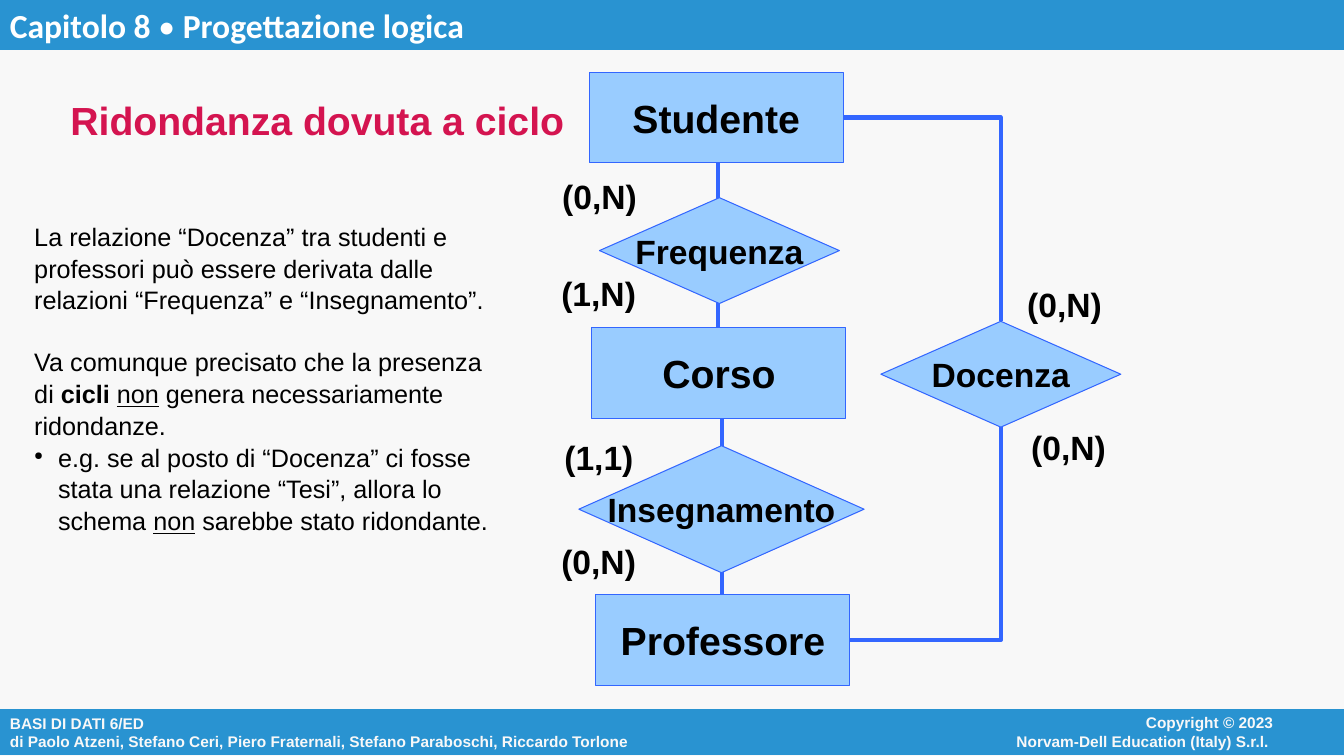
from lxml import etree
from pptx import Presentation
from pptx.dml.color import RGBColor
from pptx.enum.shapes import MSO_CONNECTOR, MSO_SHAPE
from pptx.enum.text import MSO_ANCHOR, PP_ALIGN
from pptx.oxml.ns import qn
from pptx.util import Pt

RECTANGLE, DIAMOND = MSO_SHAPE.RECTANGLE, MSO_SHAPE.DIAMOND
STRAIGHT, ELBOW = MSO_CONNECTOR.STRAIGHT, MSO_CONNECTOR.ELBOW
TOP, MIDDLE = MSO_ANCHOR.TOP, MSO_ANCHOR.MIDDLE
LEFT, CENTER, RIGHT = PP_ALIGN.LEFT, PP_ALIGN.CENTER, PP_ALIGN.RIGHT
TOP_SITE, BOTTOM_SITE, RIGHT_SITE = 0, 2, 3

COLORS = {
    "background": "F8F8F8",
    "band": "2993D1",
    "white": "FFFFFF",
    "title": "D41450",
    "node": "99CCFF",
    "edge": "3366FF",
    "text": "000000",
}
ENTITY_SIZE = (181.44, 64.8)
RELATION_SIZE = (171.36, 75.6)


def rgb(name):
    return RGBColor.from_string(COLORS[name])


def set_font(paragraph, size, color, bold=None, name="Arial"):
    font = paragraph.font
    font.name, font.size, font.bold = name, Pt(size), bold
    font.color.rgb = rgb(color)


def write_lines(shape, lines, size, color, align=LEFT, anchor=MIDDLE, wrap=True, name="Arial"):
    """Fill a shape with bold paragraphs; each line is a list of (text, bold) runs."""
    frame = shape.text_frame
    frame.word_wrap = wrap
    frame.vertical_anchor = anchor
    for index, runs in enumerate(lines):
        paragraph = frame.add_paragraph() if index else frame.paragraphs[0]
        paragraph.alignment = align
        set_font(paragraph, size, color, True, name)
        for text, bold in runs:
            run = paragraph.add_run()
            run.text = text
            if not bold:
                run.font.bold = False


def plain(*texts):
    return [[(text, True)] for text in texts]


def add_box(slide, kind, left, top, width, height, fill, line, line_width=0.75):
    shape = slide.shapes.add_shape(kind, Pt(left), Pt(top), Pt(width), Pt(height))
    shape.shadow.inherit = False
    shape.fill.solid()
    shape.fill.fore_color.rgb = rgb(fill)
    shape.line.color.rgb = rgb(line)
    shape.line.width = Pt(line_width)
    return shape


def add_text(slide, left, top, width, height):
    return slide.shapes.add_textbox(Pt(left), Pt(top), Pt(width), Pt(height))


def add_node(slide, kind, text, left, top, size, font_size):
    shape = add_box(slide, kind, left, top, *size, "node", "edge")
    write_lines(shape, plain(text), font_size, "text", CENTER, wrap=False)
    return shape


def add_entity(slide, text, left, top):
    return add_node(slide, RECTANGLE, text, left, top, ENTITY_SIZE, 28)


def add_relation(slide, text, left, top, size=RELATION_SIZE):
    return add_node(slide, DIAMOND, text, left, top, size, 24)


def add_cardinality(slide, text, center, top):
    width = 68
    box = add_text(slide, center - width / 2, top, width, 36)
    write_lines(box, plain(text), 24, "text", CENTER, wrap=False)


def style_connector(connector):
    connector.line.color.rgb = rgb("edge")
    connector.line.width = Pt(3)
    etree.SubElement(connector._element.spPr, qn("a:effectLst"))


def add_vertical(slide, x, top, bottom):
    style_connector(slide.shapes.add_connector(STRAIGHT, Pt(x), Pt(top), Pt(x), Pt(bottom)))


def add_elbow(slide, entity, relation, relation_site):
    connector = slide.shapes.add_connector(ELBOW, 0, 0, 0, 0)
    connector.begin_connect(entity, RIGHT_SITE)
    connector.end_connect(relation, relation_site)
    connector._element.spPr.find(qn("a:prstGeom")).set("prst", "bentConnector2")
    style_connector(connector)


def add_bullet(paragraph, indent):
    properties = paragraph._p.get_or_add_pPr()
    properties.set("marL", str(Pt(indent)))
    properties.set("indent", str(-Pt(indent)))
    color = etree.SubElement(properties, qn("a:buClr"))
    etree.SubElement(color, qn("a:srgbClr"), val=COLORS["text"])
    etree.SubElement(properties, qn("a:buSzPct"), val="45000")
    etree.SubElement(properties, qn("a:buChar"), char="●")


def add_explanation(slide):
    paragraphs = [
        [("La relazione “Docenza” tra studenti e professori può essere derivata dalle "
          "relazioni “Frequenza” e “Insegnamento”.", "")],
        [("Va comunque precisato che la presenza di ", ""), ("cicli ", "bold"),
         ("non", "underline"), (" genera necessariamente ridondanze.", "")],
        [("e.g. se al posto di “Docenza” ci fosse stata una relazione “Tesi”, "
          "allora lo schema ", ""), ("non", "underline"),
         (" sarebbe stato ridondante.", "")],
    ]
    frame = add_text(slide, 24.48, 156.96, 338.4, 305.28).text_frame
    frame.word_wrap = True
    frame.margin_left = frame.margin_right = frame.margin_top = frame.margin_bottom = 0
    for index, runs in enumerate(paragraphs):
        paragraph = frame.add_paragraph() if index else frame.paragraphs[0]
        paragraph.line_spacing = 1.05
        if index == 1:
            paragraph.space_before = Pt(21.6)
        if index == 2:
            add_bullet(paragraph, 17)
        set_font(paragraph, 18, "text")
        for text, style in runs:
            run = paragraph.add_run()
            run.text = text
            if style == "bold":
                run.font.bold = True
            elif style == "underline":
                run.font.underline = True


def add_bands(slide):
    footer = add_box(slide, RECTANGLE, 0, 506.16, 961, 33.84, "band", "background")
    write_lines(footer, plain(
        "BASI DI DATI 6/ED",
        "di Paolo Atzeni, Stefano Ceri, Piero Fraternali, Stefano Paraboschi, Riccardo Torlone",
    ), 11, "background")
    rights = add_text(slide, 640.08, 506.16, 276.48, 33.12)
    write_lines(rights, plain("Copyright © 2023", "Norvam-Dell Education (Italy) S.r.l. "),
                11, "background", RIGHT, TOP)
    header = add_box(slide, RECTANGLE, 0, 0, 961, 36, "band", "background", 0)
    chapter = [("Capitolo 8 ", True), ("•", False), (" Progettazione logica", True)]
    write_lines(header, [chapter], 24, "white", anchor=TOP, name="Calibri")


def add_diagram(slide):
    # Vertical links lie behind the nodes
    add_vertical(slide, 513, 108, 252)
    add_vertical(slide, 515.5, 298.8, 442.8)

    # Entities and relations
    student = add_entity(slide, "Studente", 420.84, 51.6)
    add_entity(slide, "Corso", 422.8, 234)
    professor = add_entity(slide, "Professore", 425.7, 424.8)
    add_relation(slide, "Frequenza", 428.2, 141.2)
    add_relation(slide, "Insegnamento", 413.5, 318.4, (203.76, 90.72))
    teaching = add_relation(slide, "Docenza", 629.2, 229.5)

    # The link that closes the cycle
    add_elbow(slide, student, teaching, TOP_SITE)
    add_elbow(slide, professor, teaching, BOTTOM_SITE)

    # Cardinalities
    for text, center, top in [
        ("(0,N)", 428.2, 122.4), ("(1,N)", 427.6, 191.5),
        ("(1,1)", 427.8, 308.2), ("(0,N)", 427.6, 383),
        ("(0,N)", 760.4, 199.4), ("(0,N)", 763.2, 301.7),
    ]:
        add_cardinality(slide, text, center, top)


def main():
    presentation = Presentation()
    presentation.slide_width, presentation.slide_height = Pt(960), Pt(540)
    slide = presentation.slides.add_slide(presentation.slide_layouts[6])
    slide.background.fill.solid()
    slide.background.fill.fore_color.rgb = rgb("background")

    add_bands(slide)
    add_diagram(slide)
    title = add_text(slide, 43.2, 71.28, 804.96, 28.08)
    write_lines(title, plain("Ridondanza dovuta a ciclo"), 28, "title")
    add_explanation(slide)
    presentation.save("out.pptx")


if __name__ == "__main__":
    main()
